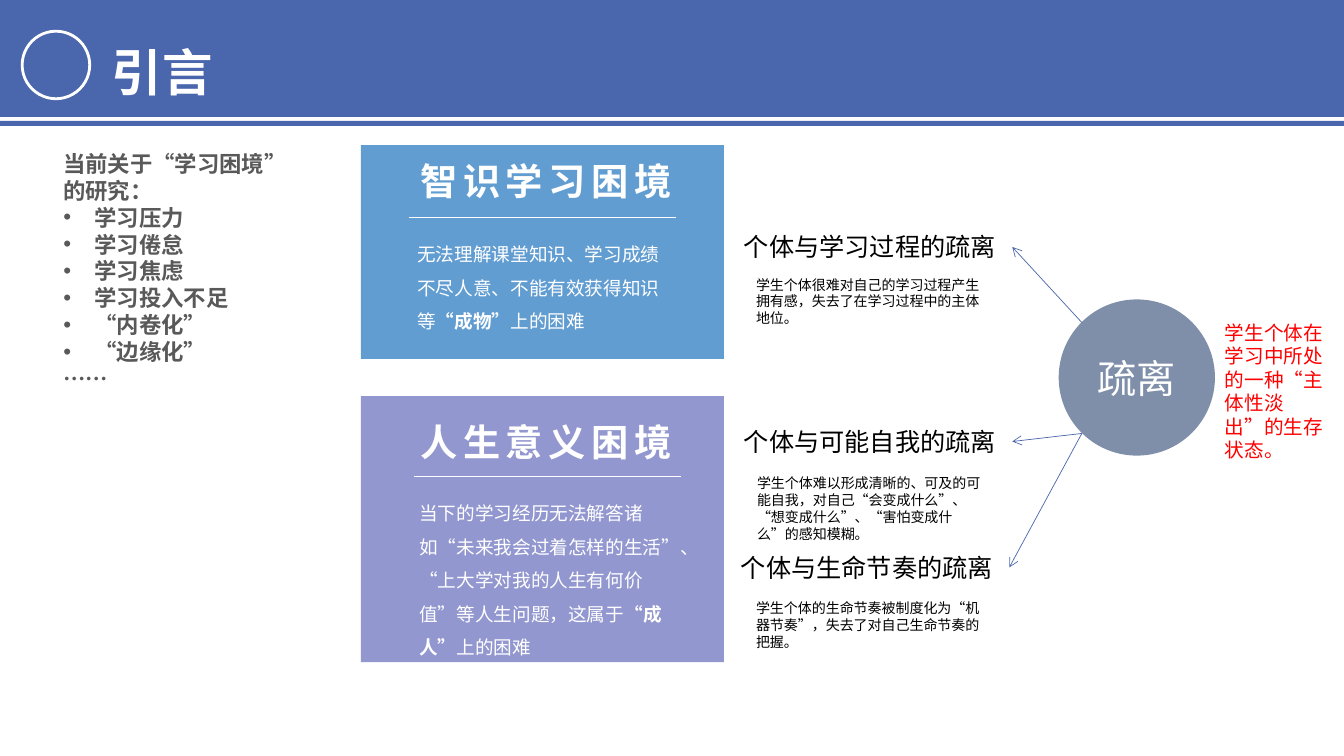
from lxml import etree
from pptx import Presentation
from pptx import util as u
from pptx.dml.color import RGBColor
from pptx.enum import shapes, text
from pptx.oxml.ns import qn

PX = 9144  # EMU in one px, 100 px to the inch
FONT = "Noto Sans CJK SC"
BLUE, WHITE, BLACK, GREY, RED = "4A66AC", "FFFFFF", "000000", "595959", "FF0000"

TITLE = "引言"
# "• " opens a bulleted line
STUDIES = ["当前关于“学习困境”", "的研究：", "• 学习压力", "• 学习倦怠", "• 学习焦虑",
           "• 学习投入不足", "• “内卷化”", "• “边缘化”", "……"]
# top, height, fill, heading offset, rule left, body box, heading, body (*bold*)
CARDS = [
    (144, 212, "629DD1", 8, 406, (404, 225, 278, 111), "智识学习困境",
     "无法理解课堂知识、学习成绩不尽人意、不能有效获得知识等*“成物”*上的困难"),
    (393, 264, "9297CF", 18, 411, (406, 482, 283, 145), "人生意义困境",
     "当下的学习经历无法解答诸如“未来我会过着怎样的生活”、“上大学对我的人生有何价值”"
     "等人生问题，这属于*“成人”*上的困难"),
]
# heading left and top, note left, top and height, arrow start, heading, note
RIFTS = [
    (728, 225, 740, 269, 60, (1073, 320), "个体与学习过程的疏离",
     "学生个体很难对自己的学习过程产生拥有感，失去了在学习过程中的主体地位。"),
    (728, 418, 741, 466, 77, (1073, 430), "个体与可能自我的疏离",
     "学生个体难以形成清晰的、可及的可能自我，对自己“会变成什么”、“想变成什么”、"
     "“害怕变成什么”的感知模糊。"),
    (725, 543, 740, 590, 60, (1073, 430), "个体与生命节奏的疏离",
     "学生个体的生命节奏被制度化为“机器节奏”，失去了对自己生命节奏的把握。"),
]
CORE = "疏离"
STATE = "学生个体在学习中所处的一种“主体性淡出”的生存状态。"


def px(*nums):
    return [u.Emu(n * PX) for n in nums]


def color(code):
    return RGBColor.from_string(code)


def sub(node, tag, **attrs):
    return etree.SubElement(node, qn(tag), attrs)


def write(shape, lines, size, hue, bold=False, space=None, track=0, wrap=True,
          align=text.PP_ALIGN.LEFT, anchor=text.MSO_ANCHOR.TOP):
    """Fill a shape with lines; *stars* mark bold parts, "• " marks bullets."""
    frame = shape.text_frame
    look = {"auto_size": text.MSO_AUTO_SIZE.NONE, "word_wrap": wrap,
            "vertical_anchor": anchor}
    for key, val in look.items():
        setattr(frame, key, val)
    for i, line in enumerate(lines):
        para = frame.add_paragraph() if i else frame.paragraphs[0]
        para.alignment = align
        if space:
            para.line_spacing = space
        if line.startswith("• "):
            line = line[2:]
            props = para._p.get_or_add_pPr()
            props.set("marL", str(31 * PX))
            props.set("indent", str(-31 * PX))
            sub(props, "a:buFont", typeface="Arial")
            sub(props, "a:buChar", char="•")
        for j, part in enumerate(line.split("*")):
            run = para.add_run()
            run.text = part
            style = {"size": u.Pt(size), "name": FONT, "bold": bold or j % 2 == 1}
            for key, val in style.items():
                setattr(run.font, key, val)
            run.font.color.rgb = color(hue)
            props = run._r.get_or_add_rPr()
            props.set("lang", "zh-CN")
            if track:
                props.set("spc", str(track * 100))
            sub(props, "a:ea", typeface=FONT)


def label(box, lines, size, hue, **style):
    shape = slide.shapes.add_textbox(*px(*box))
    write(shape, lines, size, hue, **style)
    return shape


def block(kind, box, fill, edge=None):
    shape = slide.shapes.add_shape(kind, *px(*box))
    shape.shadow.inherit = False
    shape.fill.solid()
    shape.fill.fore_color.rgb = color(fill)
    if edge:
        shape.line.color.rgb = color(edge)
        shape.line.width = u.Pt(2)
    else:
        shape.line.fill.background()
    return shape


def rule(start, end, hue):
    line = slide.shapes.add_connector(shapes.MSO_CONNECTOR.STRAIGHT,
                                      *px(*start, *end))
    line.line.color.rgb = color(hue)
    line.line.width = u.Pt(0.5)
    sub(line._element.spPr, "a:effectLst")
    return line


RECT, OVAL = shapes.MSO_SHAPE.RECTANGLE, shapes.MSO_SHAPE.OVAL
deck = Presentation()
deck.slide_width, deck.slide_height = px(1333, 750)
slide = deck.slides.add_slide(deck.slide_layouts[5])

# Header
for top, high in ((0, 116), (120, 5)):
    block(RECT, (0, top, 1333, high), BLUE)
block(OVAL, (22, 31, 67, 67), BLUE, WHITE)
title = slide.shapes.title
title.left, title.top, title.width, title.height = px(101, 6, 624, 101)
write(title, [TITLE], 36, WHITE, bold=True, space=1.5)
title.element.getparent().append(title.element)  # bring above the band

label((53, 144, 253, 252), STUDIES, 16, GREY, bold=True)

# Two dilemmas
for top, high, fill, gap, left, box, head, body in CARDS:
    block(RECT, (358, top, 360, high), fill)
    label((407, top + gap, 276, 55), [head], 26.6, WHITE, bold=True, track=4,
          wrap=False)
    level = top + gap + 64 - (gap > 8 and 2)
    rule((left, level), (left + 264, level), WHITE)
    label(box, [body], 13.3, WHITE, space=1.5)

# Alienation and its three forms
core = block(OVAL, (1050, 297, 155, 155), "7F8FA9")
write(core, [CORE], 28, WHITE, align=text.PP_ALIGN.CENTER,
      anchor=text.MSO_ANCHOR.MIDDLE)
for left, top, inset, low, high, start, head, note in RIFTS:
    name = label((left, top, 276, 40), [head], 18, BLACK)
    arrow = rule(start, (left + 276, top + 20), BLUE)
    arrow.end_connect(name, 3)
    sub(arrow.line._get_or_add_ln(), "a:tailEnd", type="arrow")
    label((inset, low, 252, high), [note], 10, BLACK)
label((1205, 313, 128, 128), [STATE], 14, RED)

deck.save("out.pptx")
